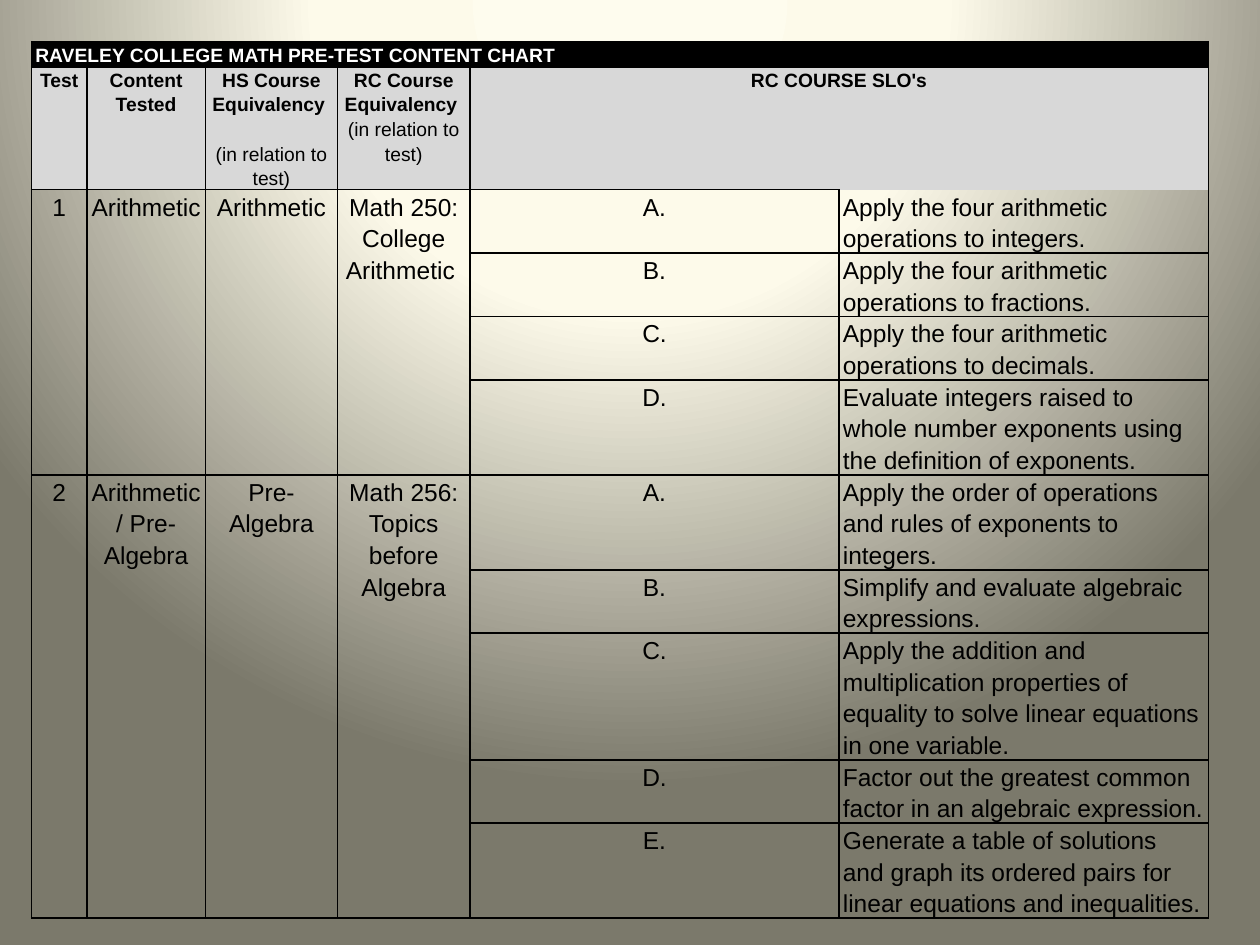
from lxml import etree
from pptx import Presentation
from pptx import oxml
from pptx.dml.color import RGBColor
from pptx.enum import text
from pptx.oxml import ns
from pptx.util import Inches, Pt

COLORS = {"black": "000000", "white": "FFFFFF", "header": "D8D8D8"}
BACKGROUND_STOPS = [(0, "FEFCEE"), (40, "FDFAEA"), (100, "7B796B")]
FONT = "Arial"
COLUMN_WIDTHS = [0.44, 0.94, 1.05, 1.05, 2.93, 2.93]
TITLE_HEIGHT, HEADER_HEIGHT, LINE_HEIGHT = 0.2, 0.97, 0.25
TITLE = "RAVELEY COLLEGE MATH PRE-TEST CONTENT CHART"
RELATION = "(in relation to test)"
HEADERS = [
    ["Test"],
    ["Content Tested"],
    ["HS Course Equivalency ", RELATION],
    ["RC Course Equivalency ", RELATION],
    ["RC COURSE SLO's"],
]
TESTS = [
    (
        [["1"], ["Arithmetic"], ["Arithmetic"], ["Math 250: College", "Arithmetic "]],
        [
            ("Apply the four arithmetic operations to integers.", 2),
            ("Apply the four arithmetic operations to fractions.", 2),
            ("Apply the four arithmetic operations to decimals.", 2),
            ("Evaluate integers raised to whole number exponents using the "
             "definition of exponents.", 3),
        ],
    ),
    (
        [["2"], ["Arithmetic/ Pre- Algebra"], ["Pre-Algebra"],
         ["Math 256: Topics before Algebra"]],
        [
            ("Apply the order of operations and rules of exponents to integers.", 3),
            ("Simplify and evaluate algebraic expressions.", 2),
            ("Apply the addition and multiplication properties of equality to "
             "solve linear equations in one variable.", 4),
            ("Factor out the greatest common factor in an algebraic expression.", 2),
            ("Generate a table of solutions and graph its ordered pairs for "
             "linear equations and inequalities.", 3),
        ],
    ),
]


def set_background(s):
    stops = "".join(
        f'<a:gs pos="{pos * 1000}"><a:srgbClr val="{color}"/></a:gs>'
        for pos, color in BACKGROUND_STOPS
    )
    bg = oxml.parse_xml(
        f'<p:bg {ns.nsdecls("p", "a")}><p:bgPr><a:gradFill rotWithShape="1">'
        f'<a:gsLst>{stops}</a:gsLst><a:path path="circle">'
        '<a:fillToRect l="50000" t="-80000" r="50000" b="180000"/></a:path>'
        "</a:gradFill><a:effectLst/></p:bgPr></p:bg>"
    )
    s.element.cSld.insert(0, bg)


def format_cell(cell, open_sides="", fill=None):
    tcPr = cell._tc.get_or_add_tcPr()
    for side in "LRTB":
        ln = etree.SubElement(tcPr, ns.qn(f"a:ln{side}"), w=str(Pt(1)))
        if side in open_sides:
            etree.SubElement(ln, ns.qn("a:noFill"))
        else:
            solid = etree.SubElement(ln, ns.qn("a:solidFill"))
            etree.SubElement(solid, ns.qn("a:srgbClr"), val=COLORS["black"])
    if fill:
        cell.fill.solid()
        cell.fill.fore_color.rgb = RGBColor.from_string(COLORS[fill])
    else:
        cell.fill.background()
    cell.margin_left = cell.margin_right = Inches(0.03)
    cell.margin_top = cell.margin_bottom = 0


def write_cell(cell, lines, size=14, bold=False, color="black", centered=True):
    tf = cell.text_frame
    for i, line in enumerate(lines):
        p = tf.add_paragraph() if i else tf.paragraphs[0]
        p.line_spacing = 1.15
        p.alignment = text.PP_ALIGN.CENTER if centered else text.PP_ALIGN.LEFT
        r = p.add_run()
        r.text = line
        r.font.name = FONT
        r.font.size = Pt(size)
        r.font.bold = bold and line != RELATION
        r.font.color.rgb = RGBColor.from_string(COLORS[color])


def add_chart_table(s):
    outcome_lines = [lines for _, outcomes in TESTS for _, lines in outcomes]
    heights = [TITLE_HEIGHT, HEADER_HEIGHT] + [n * LINE_HEIGHT for n in outcome_lines]
    table = s.shapes.add_table(
        len(heights), len(COLUMN_WIDTHS), Inches(0.25), Inches(0.33),
        Inches(sum(COLUMN_WIDTHS)), Inches(sum(heights)),
    ).table
    table.first_row = table.horz_banding = False
    for column, width in zip(table.columns, COLUMN_WIDTHS):
        column.width = Inches(width)
    for i, (row, height) in enumerate(zip(table.rows, heights)):
        row.height = Inches(height)
        for j, cell in enumerate(row.cells):
            open_sides = {(1, 4): "B", (1, 5): "B", (2, 5): "T"}.get((i, j), "")
            format_cell(cell, open_sides, {0: "black", 1: "header"}.get(i))
    return table


def fill_headings(table):
    table.cell(0, 0).merge(table.cell(0, 5))
    write_cell(table.cell(0, 0), [TITLE], 11, True, "white", False)
    table.cell(1, 4).merge(table.cell(1, 5))
    for j, lines in enumerate(HEADERS):
        write_cell(table.cell(1, j), lines, 11, True)
    table.cell(1, 2).text_frame.paragraphs[1].space_before = Pt(14)


def fill_test(table, top, labels, outcomes):
    for j, lines in enumerate(labels):
        table.cell(top, j).merge(table.cell(top + len(outcomes) - 1, j))
        write_cell(table.cell(top, j), lines)
    for i, (outcome, _) in enumerate(outcomes):
        write_cell(table.cell(top + i, 4), ["ABCDE"[i] + "."])
        write_cell(table.cell(top + i, 5), [outcome], centered=False)


def main():
    prs = Presentation()
    prs.slide_width, prs.slide_height = Inches(10), Inches(7.5)
    s = prs.slides.add_slide(prs.slide_layouts[6])
    set_background(s)
    table = add_chart_table(s)
    fill_headings(table)
    top = 2
    for labels, outcomes in TESTS:
        fill_test(table, top, labels, outcomes)
        top += len(outcomes)
    prs.save("out.pptx")


if __name__ == "__main__":
    main()
